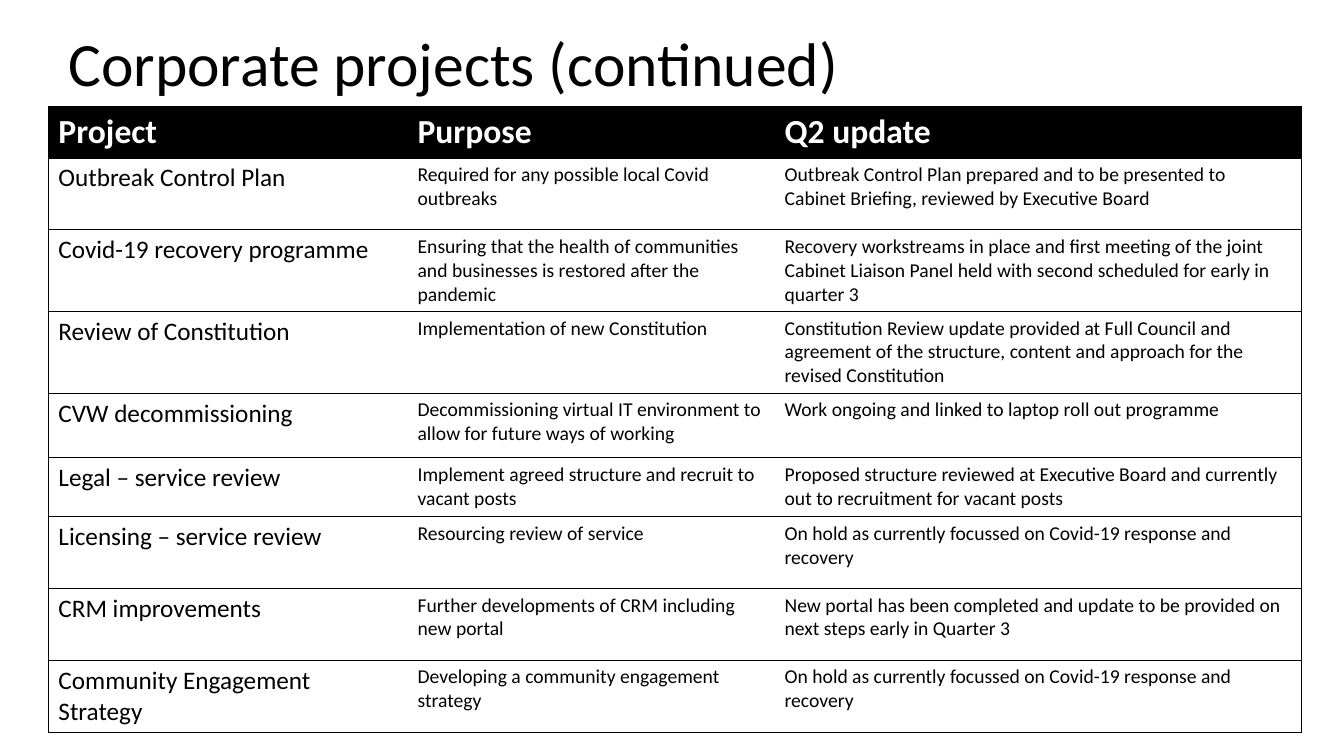
from lxml import etree
from pptx import Presentation
from pptx.dml.color import RGBColor
from pptx.enum.text import MSO_ANCHOR, PP_ALIGN
from pptx.oxml.ns import qn
from pptx.util import Cm, Pt

TITLE = "Corporate projects (continued)"
HEADER = ("Project", "Purpose", "Q2 update")
ON_HOLD = "On hold as currently focussed on Covid-19 response and recovery"
# Row height in cm, then project, purpose and update
PROJECTS = [
    (1.81, "Outbreak Control Plan",
     "Required for any possible local Covid outbreaks",
     "Outbreak Control Plan prepared and to be presented to Cabinet Briefing, "
     "reviewed by Executive Board"),
    (1.81, "Covid-19 recovery programme",
     "Ensuring that the health of communities and businesses is restored "
     "after the pandemic",
     "Recovery workstreams in place and first meeting of the joint Cabinet "
     "Liaison Panel held with second scheduled for early in quarter 3"),
    (1.07, "Review of Constitution",
     "Implementation of new Constitution",
     "Constitution Review update provided at Full Council and agreement of the "
     "structure, content and approach for the revised Constitution"),
    (1.63, "CVW decommissioning",
     "Decommissioning virtual IT environment to allow for future ways of working",
     "Work ongoing and linked to laptop roll out programme"),
    (1.48, "Legal – service review",
     "Implement agreed structure and recruit to vacant posts",
     "Proposed structure reviewed at Executive Board and currently out to "
     "recruitment for vacant posts"),
    (1.81, "Licensing – service review", "Resourcing review of service", ON_HOLD),
    (1.81, "CRM improvements",
     "Further developments of CRM including new portal",
     "New portal has been completed and update to be provided on next steps "
     "early in Quarter 3"),
    (1.81, "Community Engagement Strategy",
     "Developing a community engagement strategy", ON_HOLD),
]
HEADER_HEIGHT = 1.3
COLUMN_WIDTHS = (9.05, 9.25, 13.28)
FONT = "Calibri"
BLACK = RGBColor(0, 0, 0)
WHITE = RGBColor(255, 255, 255)
LEFT = PP_ALIGN.LEFT
MIDDLE = MSO_ANCHOR.MIDDLE


def format_text(p, size, color, bold=False):
    p.alignment = LEFT
    for r in p.runs:
        r.font.name = FONT
        r.font.size = Pt(size)
        r.font.bold = bold
        r.font.color.rgb = color


def set_borders(cell, drawn):
    """Rule the sides named in drawn (letters of LRTB) and clear the others."""
    tcPr = cell._tc.get_or_add_tcPr()
    for side in "LRTB":
        ln = etree.SubElement(tcPr, qn(f"a:ln{side}"), w=str(Pt(0.5)))
        if side in drawn:
            fill = etree.SubElement(ln, qn("a:solidFill"))
            etree.SubElement(fill, qn("a:srgbClr"), val=str(BLACK))
        else:
            etree.SubElement(ln, qn("a:noFill"))


def add_title(s):
    title = s.shapes.title
    title.left, title.top = Cm(1.47), Cm(0.28)
    title.width, title.height = Cm(29.21), Cm(2.79)
    tf = title.text_frame
    tf.text = TITLE
    tf.vertical_anchor = MIDDLE
    p = tf.paragraphs[0]
    p.line_spacing = 0.9
    format_text(p, 44, BLACK)


def add_project_table(s):
    rows = [(HEADER_HEIGHT, *HEADER)] + PROJECTS
    heights = [row[0] for row in rows]
    table = s.shapes.add_table(
        len(rows), len(HEADER), Cm(1.22), Cm(2.68),
        Cm(sum(COLUMN_WIDTHS)), Cm(sum(heights))).table
    for column, width in zip(table.columns, COLUMN_WIDTHS):
        column.width = Cm(width)
    last = len(HEADER) - 1
    for i, (height, *texts) in enumerate(rows):
        table.rows[i].height = Cm(height)
        for j, text in enumerate(texts):
            cell = table.cell(i, j)
            set_borders(cell, "TB" + {0: "L", last: "R"}.get(j, ""))
            cell.fill.solid()
            cell.fill.fore_color.rgb = WHITE if i else BLACK
            cell.text_frame.text = text
            size = 24 if i == 0 else 18 if j == 0 else 14
            format_text(cell.text_frame.paragraphs[0], size,
                        BLACK if i else WHITE, bold=i == 0)


def main():
    prs = Presentation()
    prs.slide_width, prs.slide_height = Cm(33.87), Cm(19.05)
    s = prs.slides.add_slide(prs.slide_layouts[5])
    add_title(s)
    add_project_table(s)
    prs.save("out.pptx")


if __name__ == "__main__":
    main()
